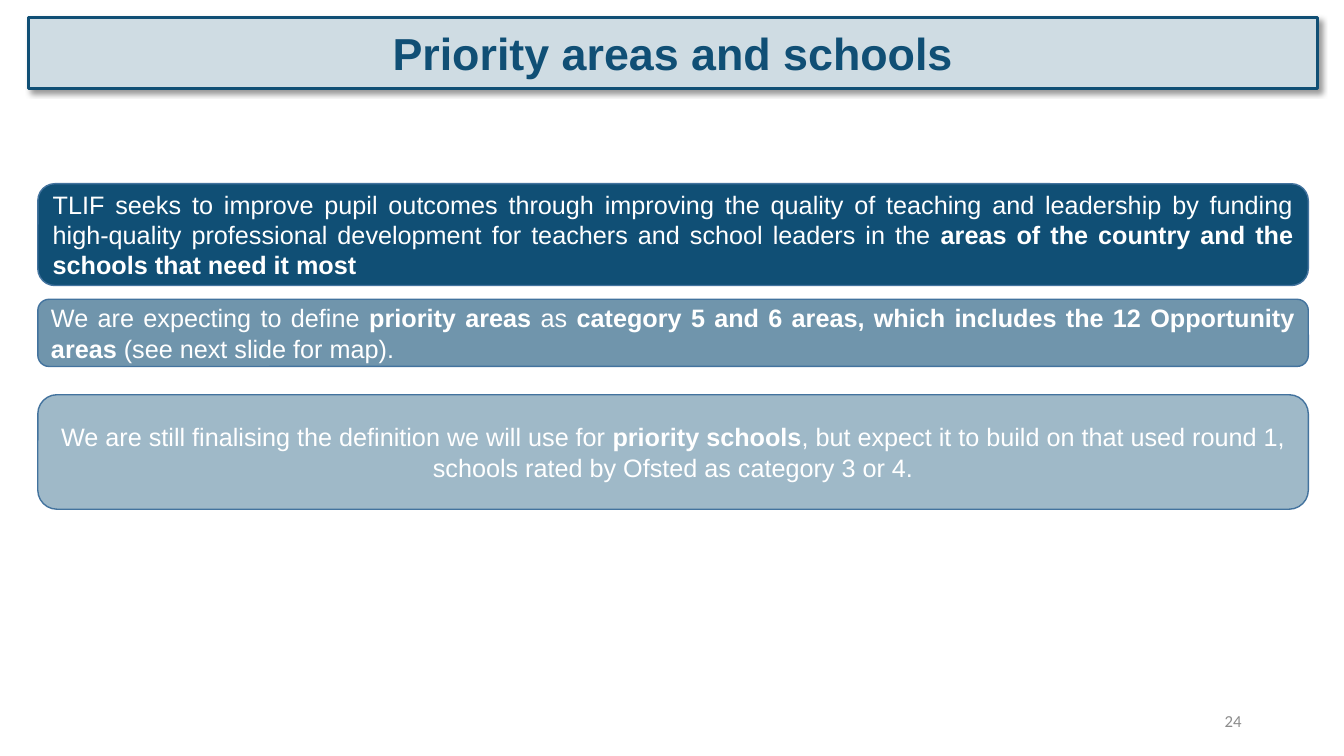
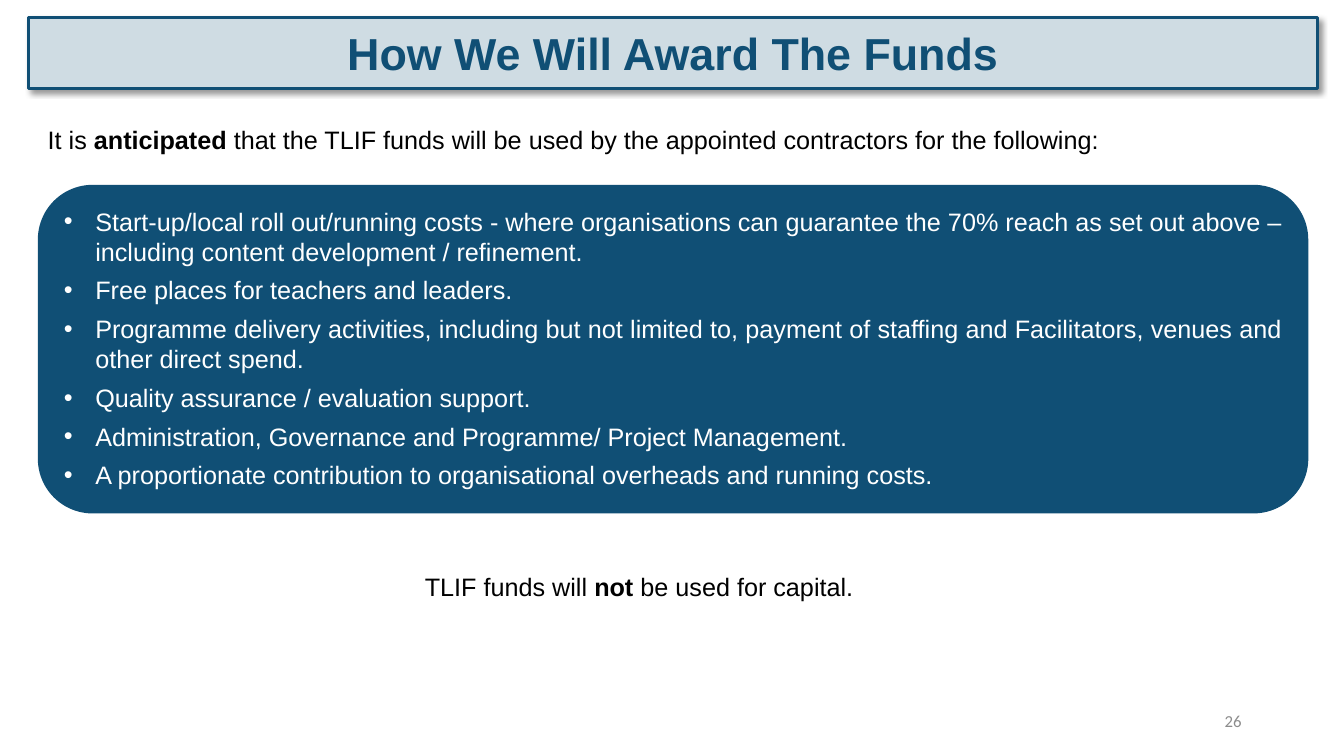
from dataclasses import dataclass

from lxml.etree import SubElement
from pptx import Presentation
from pptx.dml.color import RGBColor
from pptx.enum.shapes import MSO_SHAPE
from pptx.enum.text import MSO_ANCHOR, PP_ALIGN
from pptx.oxml import parse_xml
from pptx.oxml.ns import nsdecls, qn
from pptx.util import Emu, Pt

EMU_PER_PX = 9525
TITLE_BOX = (27, 17, 1228, 67)
NUMBER_BOX = (904, 667, 288, 38)
PANEL_LEFT, PANEL_WIDTH = 36, 1210
BULLET_INDENT = 30


@dataclass(frozen=True)
class Theme:
    """Hold the colours, fonts and type sizes of the deck."""

    navy: str = "104F75"
    steel: str = "7095AC"
    mist: str = "9FB9C8"
    band: str = "CFDCE3"
    outline: str = "43739E"
    white: str = "FFFFFF"
    black: str = "000000"
    grey: str = "8C8C8C"
    font: str = "Arial"
    number_font: str = "Calibri"
    title_size: int = 32
    body_size: int = 18
    number_size: int = 12


def px(length):
    """Convert whole pixels to EMU."""
    return Emu(length * EMU_PER_PX)


class Deck:
    """Draw styled elements on the current slide."""

    def __init__(self, theme):
        """Start an empty widescreen presentation."""
        self.theme = theme
        self.presentation = Presentation()
        self.presentation.slide_width = px(1280)
        self.presentation.slide_height = px(720)
        self.slide = None

    def add_slide(self, title, number):
        """Add a slide with its title band and number."""
        layout = self.presentation.slide_layouts.get_by_name("Title Only")
        self.slide = self.presentation.slides.add_slide(layout)
        self.title_band(title)
        self.slide_number(number)

    def title_band(self, text):
        """Format the title placeholder as a shadowed band."""
        theme, shape = self.theme, self.slide.shapes.title
        shape.left, shape.top, shape.width, shape.height = map(px, TITLE_BOX)
        self.paint(shape, theme.band, theme.navy, 2.25)
        shape._element.spPr.append(parse_xml(
            f'<a:effectLst {nsdecls("a")}>'
            '<a:outerShdw blurRad="50800" dist="38100" dir="2700000" algn="tl" rotWithShape="0">'
            f'<a:srgbClr val="{theme.black}"><a:alpha val="40000"/></a:srgbClr>'
            '</a:outerShdw></a:effectLst>'))
        shape.text_frame.vertical_anchor = MSO_ANCHOR.MIDDLE
        paragraph = shape.text_frame.paragraphs[0]
        self.fill_paragraph(paragraph, f"**{text}**", theme.navy, PP_ALIGN.CENTER,
                            theme.title_size)

    def slide_number(self, number):
        """Put the slide number at the lower right."""
        theme = self.theme
        self.text(NUMBER_BOX, str(number), theme.grey, PP_ALIGN.RIGHT,
                  theme.number_size, theme.number_font, MSO_ANCHOR.MIDDLE)

    def text(self, box, text, color, align=PP_ALIGN.LEFT, size=None, font=None,
             anchor=MSO_ANCHOR.TOP):
        """Add a wrapped text box."""
        frame = self.slide.shapes.add_textbox(*map(px, box)).text_frame
        frame.word_wrap = True
        frame.vertical_anchor = anchor
        self.fill_paragraph(frame.paragraphs[0], text, color, align, size, font)

    def panel(self, top, height, fill, text, align=PP_ALIGN.JUSTIFY):
        """Add an outlined rounded panel with one paragraph."""
        frame = self.rounded(top, height, fill, self.theme.outline).text_frame
        self.fill_paragraph(frame.paragraphs[0], text, self.theme.white, align)

    def bullet_panel(self, top, height, fill, items):
        """Add a rounded panel with a bulleted list."""
        frame = self.rounded(top, height, fill).text_frame
        frame.vertical_anchor = MSO_ANCHOR.TOP
        frame.text = "\n".join(items)
        for paragraph, item in zip(frame.paragraphs, items):
            self.fill_paragraph(paragraph, item, self.theme.white, PP_ALIGN.JUSTIFY)
            paragraph.space_before = Pt(6)
            properties = paragraph._p.get_or_add_pPr()
            properties.set("marL", str(px(BULLET_INDENT)))
            properties.set("indent", str(-px(BULLET_INDENT)))
            SubElement(properties, qn("a:buFont")).set("typeface", self.theme.font)
            SubElement(properties, qn("a:buChar")).set("char", "•")

    def rounded(self, top, height, fill, line=None):
        """Add a full-width rounded rectangle."""
        box = map(px, (PANEL_LEFT, top, PANEL_WIDTH, height))
        shape = self.slide.shapes.add_shape(MSO_SHAPE.ROUNDED_RECTANGLE, *box)
        self.paint(shape, fill, line)
        shape.shadow.inherit = False
        shape.text_frame.word_wrap = True
        shape.text_frame.vertical_anchor = MSO_ANCHOR.MIDDLE
        return shape

    def paint(self, shape, fill, line=None, line_width=1):
        """Set the fill and outline of a shape."""
        shape.fill.solid()
        shape.fill.fore_color.rgb = RGBColor.from_string(fill)
        if line is None:
            shape.line.fill.background()
        else:
            shape.line.color.rgb = RGBColor.from_string(line)
            shape.line.width = Pt(line_width)

    def fill_paragraph(self, paragraph, text, color, align, size=None, font=None):
        """Fill a paragraph, with bold parts between double asterisks."""
        paragraph.clear()
        paragraph.alignment = align
        for position, part in enumerate(text.split("**")):
            if not part:
                continue
            run = paragraph.add_run()
            run.text = part
            run.font.name = font or self.theme.font
            run.font.size = Pt(size or self.theme.body_size)
            run.font.bold = position % 2 == 1
            run.font.color.rgb = RGBColor.from_string(color)


def priority_slide(deck):
    """Build the slide on priority areas and schools."""
    theme = deck.theme
    deck.add_slide("Priority areas and schools", 24)
    deck.panel(175, 97, theme.navy,
               "TLIF seeks to improve pupil outcomes through improving the quality of teaching "
               "and leadership by funding high-quality professional development for teachers and "
               "school leaders in the **areas of the country and the schools that need it most**")
    deck.panel(285, 64, theme.steel,
               "We are expecting to define **priority areas** as **category 5 and 6 areas, which "
               "includes the 12 Opportunity areas** (see next slide for map).")
    deck.panel(376, 109, theme.mist,
               "We are still finalising the definition we will use for **priority schools**, but "
               "expect it to build on that used round 1, schools rated by Ofsted as category "
               "3 or 4.", PP_ALIGN.CENTER)


def funds_slide(deck):
    """Build the slide on how the funds are awarded."""
    theme = deck.theme
    deck.add_slide("How We Will Award The Funds", 26)
    deck.text((36, 114, 1105, 38),
              "It is **anticipated** that the TLIF funds will be used by the appointed "
              "contractors for the following:", theme.black)
    deck.bullet_panel(176, 313, theme.navy, [
        "Start-up/local roll out/running costs - where organisations can guarantee the 70% reach "
        "as set out above – including content development / refinement.",
        "Free places for teachers and leaders.",
        "Programme delivery activities, including but not limited to, payment of staffing and "
        "Facilitators, venues and other direct spend.",
        "Quality assurance / evaluation support.",
        "Administration, Governance and Programme/ Project Management.",
        "A proportionate contribution to organisational overheads and running costs.",
    ])
    deck.text((275, 517, 674, 83), "TLIF funds will **not** be used for capital. ",
              theme.black, PP_ALIGN.CENTER, anchor=MSO_ANCHOR.MIDDLE)


def main():
    """Build and save the presentation."""
    deck = Deck(Theme())
    priority_slide(deck)
    funds_slide(deck)
    deck.presentation.save("out.pptx")


if __name__ == "__main__":
    main()
